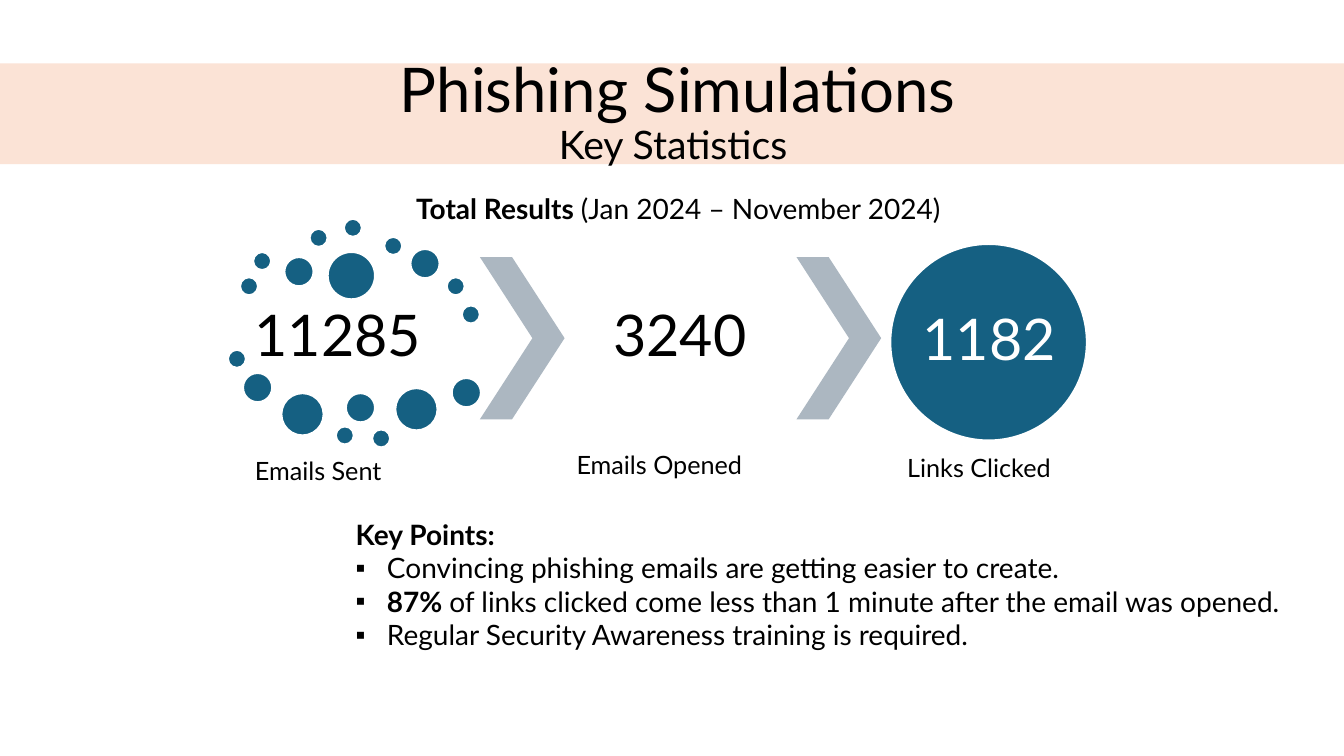
from pptx import Presentation
from pptx.dml.color import RGBColor
from pptx.enum.shapes import MSO_SHAPE
from pptx.enum.text import MSO_ANCHOR, MSO_AUTO_SIZE, PP_ALIGN
from pptx.oxml.ns import qn
from pptx.util import Inches, Pt
from lxml import etree

RECT, OVAL, CHEVRON = MSO_SHAPE.RECTANGLE, MSO_SHAPE.OVAL, MSO_SHAPE.CHEVRON
MIDDLE, TOP = MSO_ANCHOR.MIDDLE, MSO_ANCHOR.TOP
CENTER, LEFT = PP_ALIGN.CENTER, PP_ALIGN.LEFT
FIXED = MSO_AUTO_SIZE.NONE
FONT = "Lato"
COLORS = {"band": "FBE3D6", "blue": "156082", "grey": "ACB7C1",
          "black": "000000", "white": "FFFFFF"}

# Diameter: left and top of each dot
DOTS = {
    0.18: [(2.38, 2.75), (2.51, 2.5), (3.07, 2.27), (3.41, 2.17),
           (3.81, 2.35), (4.43, 2.75), (4.58, 3.03), (2.26, 3.47),
           (3.33, 4.23), (3.69, 4.26)],
    0.29: [(2.82, 2.55), (4.07, 2.47), (2.41, 3.7), (3.43, 3.9),
           (4.48, 3.75)],
    0.42: [(2.79, 3.9), (3.92, 3.85)],
    0.47: [(3.25, 2.5)],
}
LABELS = [("Emails Sent", 2.43, 4.47), ("Emails Opened", 5.62, 4.41),
          ("Links Clicked", 8.9, 4.44)]
POINTS = [
    [("Convincing phishing emails are getting easier to create.", False)],
    [("87% ", True),
     ("of links clicked come less than 1 minute after the email was opened.",
      False)],
    [("Regular Security Awareness training is required.", False)],
]


def color(name):
    return RGBColor.from_string(COLORS[name])


def add_shape(slide, kind, box, fill, line=None):
    shape = slide.shapes.add_shape(kind, *map(Inches, box))
    shape.shadow.inherit = False
    shape.fill.solid()
    shape.fill.fore_color.rgb = color(fill)
    if line:
        shape.line.color.rgb = color(line)
        shape.line.width = Pt(1.5)
    else:
        shape.line.fill.background()
    return shape


def add_disc(slide, left, top, size):
    add_shape(slide, OVAL, (left, top, size, size), "blue", "white")


def add_arrow(slide, left):
    arrow = add_shape(slide, CHEVRON, (left, 2.55, 0.84, 1.61), "grey")
    arrow.adjustments[0] = 0.62


def add_box(slide, box, anchor=TOP):
    frame = slide.shapes.add_textbox(*map(Inches, box)).text_frame
    frame.word_wrap = True
    frame.vertical_anchor = anchor
    return frame


def style(para, size, tone="black", align=LEFT):
    para.alignment = align
    para.font.name = FONT
    para.font.size = Pt(size)
    para.font.color.rgb = color(tone)


def add_runs(para, runs):
    for text, bold in runs:
        run = para.add_run()
        run.text = text
        run.font.bold = bold


def add_bullet(para):
    props = para._p.get_or_add_pPr()
    props.set("marL", str(Inches(0.31)))
    props.set("indent", str(-Inches(0.31)))
    etree.SubElement(props, qn("a:buFont"), typeface="Arial")
    etree.SubElement(props, qn("a:buChar"), char="▪")


def add_count(slide, text, box, tone="black", inset=0.06, right=0.06):
    frame = add_box(slide, box, MIDDLE)
    frame.margin_left = frame.margin_top = Inches(inset)
    frame.margin_bottom = Inches(inset)
    frame.margin_right = Inches(right)
    para = frame.paragraphs[0]
    para.text = text
    para.line_spacing = 0.9
    style(para, 41, tone, CENTER)


def add_title(slide):
    title = slide.shapes.title
    title.left, title.top = Inches(0.81), Inches(0.4)
    title.width, title.height = Inches(11.83), Inches(1.45)
    band = add_shape(slide, RECT, (0, 0.63, 13.33, 1), "band")
    title.element.addprevious(band.element)
    frame = title.text_frame
    frame.auto_size = FIXED
    frame.vertical_anchor = MIDDLE
    para = frame.paragraphs[0]
    para.line_spacing = 0.9
    para.add_run().text = "Phishing Simulations"
    para.add_line_break()
    sub = para.add_run()
    sub.text = "Key Statistics "
    style(para, 44, align=CENTER)
    sub.font.size = Pt(28)


def add_points(slide):
    frame = add_box(slide, (3.43, 5.08, 9.7, 1.75))
    head = frame.paragraphs[0]
    add_runs(head, [("Key Points:", True)])
    style(head, 20)
    for runs in POINTS:
        para = frame.add_paragraph()
        add_bullet(para)
        add_runs(para, runs)
        style(para, 20)


def main():
    prs = Presentation()
    prs.slide_width, prs.slide_height = Inches(13.33), Inches(7.5)
    slide = prs.slides.add_slide(prs.slide_layouts[5])
    add_title(slide)

    add_count(slide, "11285", (2.39, 2.98, 2.29, 0.75), right=0.43)
    for size, spots in DOTS.items():
        for left, top in spots:
            add_disc(slide, left, top, size)
    add_arrow(slide, 4.76)
    add_count(slide, "3240", (5.6, 2.55, 2.29, 1.61))
    add_arrow(slide, 7.9)
    add_disc(slide, 8.83, 2.42, 1.95)
    add_count(slide, "1182", (9.12, 2.7, 1.38, 1.38), "white", 0, 0)

    para = add_box(slide, (4.03, 1.85, 6.39, 0.44)).paragraphs[0]
    add_runs(para, [("Total Results ", True),
                    ("(Jan 2024 – November 2024)", False)])
    style(para, 20)
    for text, left, top in LABELS:
        para = add_box(slide, (left, top, 2, 0.4)).paragraphs[0]
        para.text = text
        style(para, 18)
    add_points(slide)
    prs.save("out.pptx")


if __name__ == "__main__":
    main()
